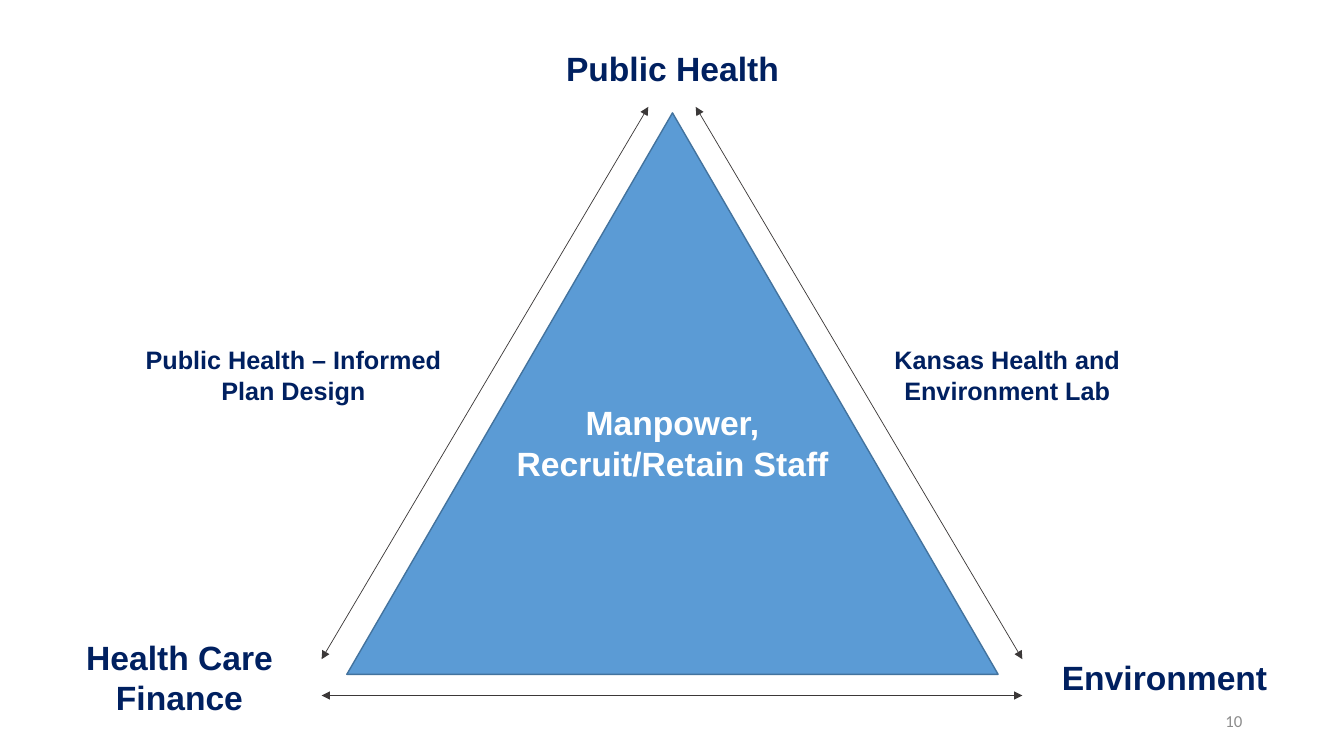
from dataclasses import dataclass

from lxml import etree
from pptx import Presentation
from pptx.dml.color import RGBColor
from pptx.enum.shapes import MSO_CONNECTOR, MSO_SHAPE
from pptx.enum.text import MSO_ANCHOR, PP_ALIGN
from pptx.oxml.ns import qn
from pptx.slide import Slide
from pptx.util import Inches, Pt

STRAIGHT = MSO_CONNECTOR.STRAIGHT
TRIANGLE = MSO_SHAPE.ISOSCELES_TRIANGLE
TOP, MIDDLE = MSO_ANCHOR.TOP, MSO_ANCHOR.MIDDLE
CENTER, RIGHT = PP_ALIGN.CENTER, PP_ALIGN.RIGHT


@dataclass(frozen=True)
class Theme:
    navy: str = "002060"
    white: str = "FFFFFF"
    gray: str = "8C8C8C"
    arrow: str = "3B3838"
    triangle: str = "5B9BD5"
    outline: str = "43739E"
    heading_font: str = "Arial"
    number_font: str = "Calibri"
    corner_size: int = 24
    side_size: int = 18
    number_size: int = 12
    outline_width: float = 1
    arrow_width: float = 0.5


@dataclass(frozen=True)
class Label:
    text: str
    left: float
    top: float
    height: float
    size: int
    color: str


THEME = Theme()
LABEL_WIDTH = 3.32
ONE_LINE, TWO_LINES, TWO_SMALL_LINES = 0.5, 0.91, 0.71
SIDE_TOP = 3.37

LABELS = [
    Label("Manpower, Recruit/Retain Staff", 5.01, 3.94, TWO_LINES, THEME.corner_size, THEME.white),
    Label("Public Health", 5.01, 0.43, ONE_LINE, THEME.corner_size, THEME.navy),
    Label("Environment", 9.89, 6.47, ONE_LINE, THEME.corner_size, THEME.navy),
    Label("Health Care Finance", 0.12, 6.27, TWO_LINES, THEME.corner_size, THEME.navy),
    Label("Kansas Health and Environment Lab", 8.33, SIDE_TOP, TWO_SMALL_LINES,
          THEME.side_size, THEME.navy),
    Label("Public Health – Informed Plan Design", 1.25, SIDE_TOP, TWO_SMALL_LINES,
          THEME.side_size, THEME.navy),
]

ARROW_LEFT, ARROW_RIGHT = 3.19, 10.14
ARROW_TOP, ARROW_FOOT, BASELINE = 1.06, 6.54, 6.9
ARROWS = [
    (6.43, ARROW_TOP, ARROW_LEFT, ARROW_FOOT),
    (6.9, ARROW_TOP, ARROW_RIGHT, ARROW_FOOT),
    (ARROW_LEFT, BASELINE, ARROW_RIGHT, BASELINE),
]


def add_text(slide: Slide, text: str, *, left: float, top: float, width: float, height: float,
             size: int, color: str, font: str = THEME.heading_font, bold: bool = True,
             align: PP_ALIGN = CENTER, anchor: MSO_ANCHOR = TOP) -> None:
    box = slide.shapes.add_textbox(Inches(left), Inches(top), Inches(width), Inches(height))
    frame = box.text_frame
    frame.word_wrap = True
    frame.vertical_anchor = anchor
    paragraph = frame.paragraphs[0]
    paragraph.alignment = align
    run = paragraph.add_run()
    run.text = text
    run.font.name = font
    run.font.size = Pt(size)
    run.font.bold = bold
    run.font.color.rgb = RGBColor.from_string(color)


def add_triangle(slide: Slide) -> None:
    triangle = slide.shapes.add_shape(TRIANGLE, Inches(3.44), Inches(1.12), Inches(6.46), Inches(5.57))
    triangle.shadow.inherit = False
    triangle.fill.solid()
    triangle.fill.fore_color.rgb = RGBColor.from_string(THEME.triangle)
    triangle.line.color.rgb = RGBColor.from_string(THEME.outline)
    triangle.line.width = Pt(THEME.outline_width)


def add_double_arrow(slide: Slide, x1: float, y1: float, x2: float, y2: float) -> None:
    arrow = slide.shapes.add_connector(STRAIGHT, Inches(x1), Inches(y1), Inches(x2), Inches(y2))
    arrow.line.color.rgb = RGBColor.from_string(THEME.arrow)
    arrow.line.width = Pt(THEME.arrow_width)
    properties = arrow.line._get_or_add_ln()
    for end in ("a:headEnd", "a:tailEnd"):
        etree.SubElement(properties, qn(end), type="triangle")
    etree.SubElement(arrow._element.spPr, qn("a:effectLst"))


def main() -> None:
    presentation = Presentation()
    presentation.slide_width = Inches(13.33)
    presentation.slide_height = Inches(7.5)
    slide = presentation.slides.add_slide(presentation.slide_layouts[6])
    add_text(slide, "10", left=9.42, top=6.95, width=3, height=0.4, size=THEME.number_size,
             color=THEME.gray, font=THEME.number_font, bold=False, align=RIGHT, anchor=MIDDLE)
    add_triangle(slide)
    for ends in ARROWS:
        add_double_arrow(slide, *ends)
    for label in LABELS:
        add_text(slide, label.text, left=label.left, top=label.top, width=LABEL_WIDTH,
                 height=label.height, size=label.size, color=label.color)
    presentation.save("out.pptx")


if __name__ == "__main__":
    main()
